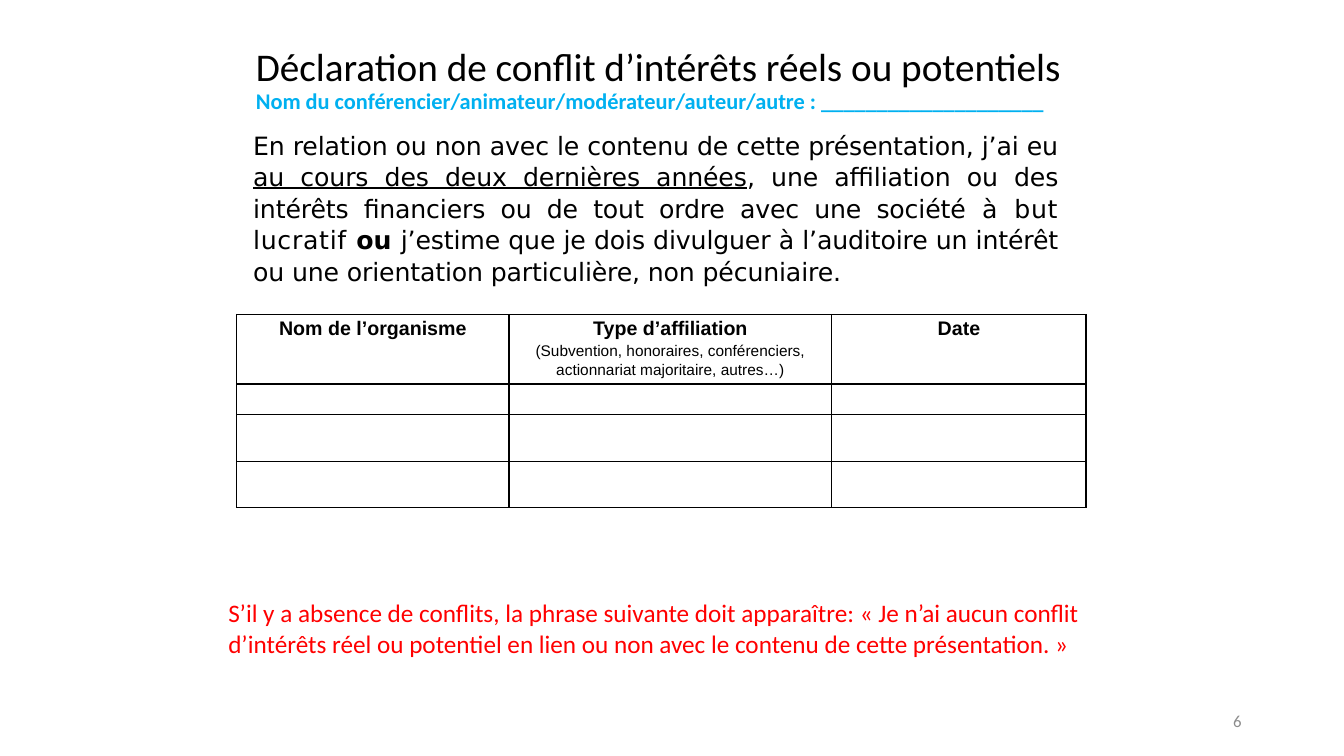
"""Builds the conflict-of-interest declaration slide."""
import pptx
import pptx.dml.color
import pptx.enum.text
import pptx.oxml
import pptx.oxml.ns
import pptx.util

Pt = pptx.util.Pt
RGBColor = pptx.dml.color.RGBColor
ALIGN = pptx.enum.text.PP_ALIGN
ANCHOR = pptx.enum.text.MSO_ANCHOR

BLACK = RGBColor(0x00, 0x00, 0x00)
BLUE = RGBColor(0x00, 0xB0, 0xF0)
RED = RGBColor(0xFF, 0x00, 0x00)
GREY = RGBColor(0x8C, 0x8C, 0x8C)

TITLE = "Déclaration de conflit d’intérêts réels ou potentiels"
SPEAKER = "Nom du conférencier/animateur/modérateur/auteur/autre : ____________________"
DECLARATION = [
    ("En relation ou non avec le contenu de cette présentation, j’ai eu ", {"spc": "-10"}),
    ("au cours des deux dernières années", {"spc": "-10", "u": "sng"}),
    (", une affiliation ou des intérêts financiers ou de tout ordre avec une société", {"spc": "-10"}),
    (" à but lucratif ", {"spc": "50"}),
    ("ou ", {"b": "1"}),
    ("j’estime que je dois divulguer à l’auditoire un intérêt ou une orientation "
     "particulière, non pécuniaire.", {"spc": "-10"}),
]
HEADINGS = [
    ["Nom de l’organisme"],
    ["Type d’affiliation", "(Subvention, honoraires, conférenciers, actionnariat majoritaire, autres…)"],
    ["Date"],
]
NO_CONFLICT = ("S’il y a absence de conflits, la phrase suivante doit apparaître: "
               "« Je n’ai aucun conflit d’intérêts réel ou potentiel en lien ou non "
               "avec le contenu de cette présentation. »")
PAGE = "6"
COLUMN_WIDTHS = [194.4, 230.6, 181.6]
ROW_HEIGHTS = [46.4, 22, 33.2, 33.2]


def style(font, size, color, name="Calibri", bold=False):
    font.size, font.name, font.bold = Pt(size), name, bold
    font.color.rgb = color


def add_text(slide, left, top, width, height, anchor=ANCHOR.TOP):
    frame = slide.shapes.add_textbox(Pt(left), Pt(top), Pt(width), Pt(height)).text_frame
    frame.word_wrap = True
    frame.vertical_anchor = anchor
    return frame


def add_border(cell):
    properties = cell._tc.get_or_add_tcPr()
    for position, side in enumerate(("lnL", "lnR", "lnT", "lnB")):
        properties.insert(position, pptx.oxml.parse_xml(
            f'<a:{side} {pptx.oxml.ns.nsdecls("a")} w="12700"><a:solidFill>'
            f'<a:srgbClr val="{BLACK}"/></a:solidFill></a:{side}>'))


def add_title(slide):
    heading = add_text(slide, 175.7, 5.8, 828, 104.4, ANCHOR.MIDDLE).paragraphs[0]
    heading.line_spacing = 0.9
    title = heading.add_run()
    title.text = TITLE
    style(title.font, 28, BLACK)
    heading.add_line_break()
    speaker = heading.add_run()
    speaker.text = SPEAKER
    style(speaker.font, 16, BLUE, bold=True)


def add_declaration(slide):
    frame = add_text(slide, 167.8, 88.6, 601.2, 138.2)
    frame.margin_left = frame.margin_right = Pt(13)
    declaration = frame.paragraphs[0]
    declaration.alignment = ALIGN.JUSTIFY
    declaration.line_spacing = 1.04
    style(declaration.font, 18, BLACK, "DejaVu Sans")
    for text, attributes in DECLARATION:
        run = declaration.add_run()
        run.text = text
        style(run.font, 18, BLACK, "DejaVu Sans")
        for key, value in attributes.items():
            run.font._element.set(key, value)


def add_affiliations(slide):
    table = slide.shapes.add_table(
        len(ROW_HEIGHTS), len(COLUMN_WIDTHS), Pt(169.2), Pt(224.6),
        Pt(sum(COLUMN_WIDTHS)), Pt(sum(ROW_HEIGHTS))).table
    for column, width in zip(table.columns, COLUMN_WIDTHS):
        column.width = Pt(width)
    for row, height in zip(table.rows, ROW_HEIGHTS):
        row.height = Pt(height)
    for cell in table.iter_cells():
        cell.margin_left = cell.margin_right = Pt(2.2)
        cell.margin_top = cell.margin_bottom = 0
        cell.fill.background()
        add_border(cell)
        style(cell.text_frame.paragraphs[0].font, 12, BLACK, "Arial")
    for cell, lines in zip(table.rows[0].cells, HEADINGS):
        cell.text = "\n".join(lines)
        for index, line in enumerate(cell.text_frame.paragraphs):
            line.alignment = ALIGN.CENTER
            line.line_spacing = 1.15
            style(line.font, 11 if index else 14, BLACK, "Arial", bold=index == 0)


def add_line(slide, text, box, size, color, alignment, anchor):
    line = add_text(slide, *box, anchor).paragraphs[0]
    line.text = text
    line.alignment = alignment
    style(line.font, size, color)


def main():
    deck = pptx.Presentation()
    deck.slide_width, deck.slide_height = Pt(960), Pt(540)
    slide = deck.slides.add_slide(deck.slide_layouts[6])
    add_title(slide)
    add_line(slide, PAGE, (678, 500.5, 216, 28.8), 12, GREY, ALIGN.RIGHT, ANCHOR.MIDDLE)
    add_affiliations(slide)
    add_declaration(slide)
    add_line(slide, NO_CONFLICT, (156, 423.4, 624.2, 51), 18, RED, ALIGN.LEFT, ANCHOR.TOP)
    deck.save("out.pptx")


if __name__ == "__main__":
    main()
